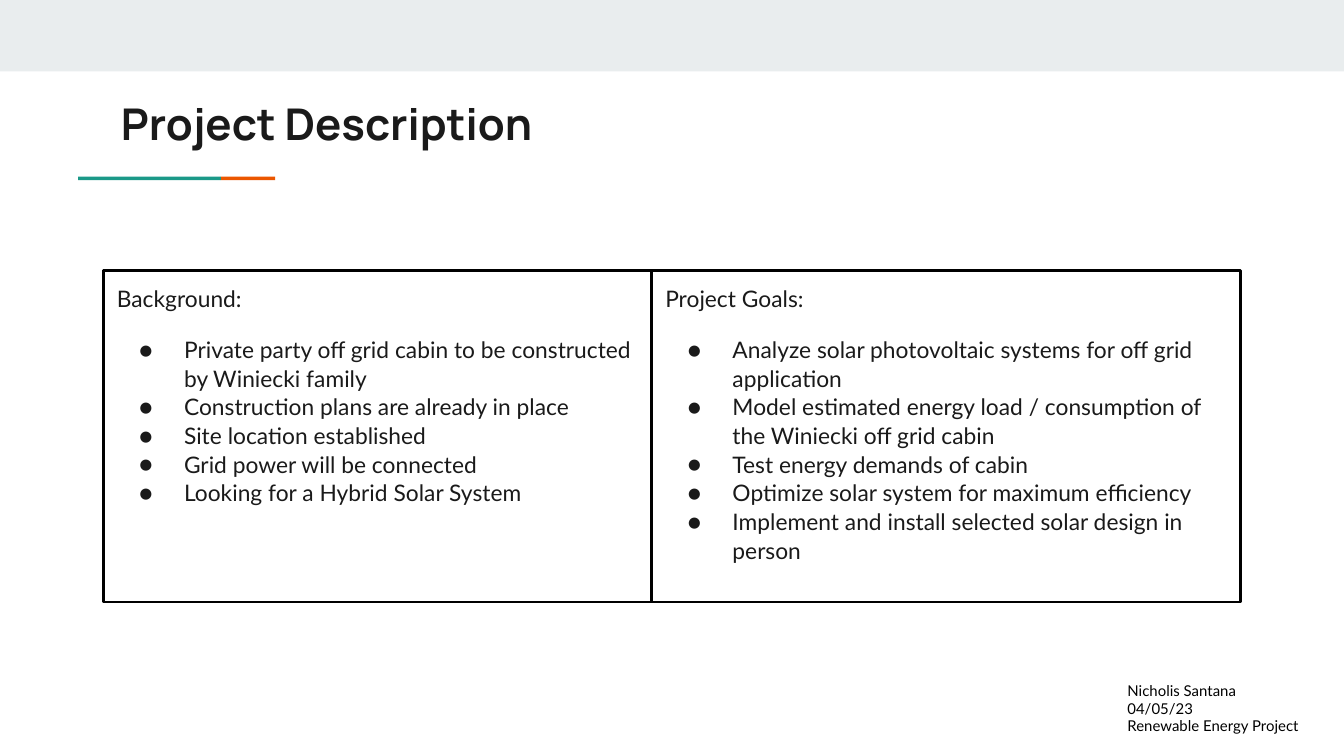
from lxml.etree import SubElement
from pptx import Presentation
from pptx.dml.color import RGBColor
from pptx.enum.shapes import MSO_SHAPE
from pptx.enum.text import MSO_ANCHOR, MSO_AUTO_SIZE, PP_ALIGN
from pptx.oxml.ns import qn
from pptx.util import Pt

THEME = {
    "ink": "1A1A1A", "black": "000000", "band": "E9EDEE",
    "teal": "1A9988", "orange": "EB5600",
    "title_font": "Manrope", "text_font": "Lato",
    "title_size": 23.4, "body_size": 12.2, "credit_size": 8,
}


def place_text(box, bounds, lines, font, paragraph):
    for name, value in zip(("left", "top", "width", "height"), bounds):
        setattr(box, name, Pt(value))
    frame = box.text_frame
    frame.text = "\n".join(lines)
    frame_format = {"word_wrap": True, "auto_size": MSO_AUTO_SIZE.NONE,
                    "vertical_anchor": MSO_ANCHOR.TOP}
    for side in ("left", "top", "right", "bottom"):
        frame_format[f"margin_{side}"] = Pt(7.2)
    for name, value in frame_format.items():
        setattr(frame, name, value)
    family, size, color, bold = font
    for para in frame.paragraphs:
        for name, value in paragraph.items():
            setattr(para, name, value)
        for span in para.runs:
            for name, value in {"name": family, "size": Pt(size), "bold": bold}.items():
                setattr(span.font, name, value)
            span.font.color.rgb = RGBColor.from_string(color)
    return frame.paragraphs


def set_bullet(para, character):
    properties = para._p.get_or_add_pPr()
    properties.set("marL", str(Pt(36) if character else 0))
    properties.set("indent", str(Pt(-24) if character else 0))
    if not character:
        SubElement(properties, qn("a:buNone"))
        return
    color = SubElement(properties, qn("a:buClr"))
    SubElement(color, qn("a:srgbClr"), val=THEME["ink"])
    SubElement(properties, qn("a:buFont"), typeface=THEME["text_font"])
    SubElement(properties, qn("a:buChar"), char=character)


deck = Presentation()
deck.slide_width, deck.slide_height = Pt(720), Pt(405)
page = deck.slides.add_slide(deck.slide_layouts[3])

bars = [
    (0, 0, 720, 38.3, "band"),
    (118.3, 94.7, 29.2, 1.8, "orange"),
    (41.8, 94.7, 76.5, 1.8, "teal"),
]
for left, top, width, height, color in bars:
    bar = page.shapes.add_shape(MSO_SHAPE.RECTANGLE, Pt(left), Pt(top), Pt(width), Pt(height))
    bar.shadow.inherit = False
    bar.fill.solid()
    bar.fill.fore_color.rgb = RGBColor.from_string(THEME[color])
    bar.line.fill.background()

plain = {"alignment": PP_ALIGN.LEFT, "space_before": Pt(0), "space_after": Pt(0)}
title_font = (THEME["title_font"], THEME["title_size"], THEME["ink"], True)
place_text(page.shapes.title, (57.6, 44.6, 605.5, 42.5), ["Project Description"], title_font, plain)

columns = [
    (55.4, 293.8, [
        "Background:",
        "Private party off grid cabin to be constructed by Winiecki family",
        "Construction plans are already in place",
        "Site location established",
        "Grid power will be connected",
        "Looking for a Hybrid Solar System",
    ]),
    (349.2, 315.4, [
        "Project Goals:",
        "Analyze solar photovoltaic systems for off grid application",
        "Model estimated energy load / consumption of the Winiecki off grid cabin",
        "Test energy demands of cabin",
        "Optimize solar system for maximum efficiency",
        "Implement and install selected solar design in person",
    ]),
]
body_font = (THEME["text_font"], THEME["body_size"], THEME["ink"], False)
for number, (left, width, lines) in enumerate(columns, start=1):
    box = page.placeholders[number]
    paragraphs = place_text(box, (left, 144.7, width, 177.8), lines, body_font,
                            {**plain, "line_spacing": 1.05})
    box.line.color.rgb = RGBColor.from_string(THEME["black"])
    box.line.width = Pt(1.5)
    paragraphs[1].space_before = Pt(12)
    for position, para in enumerate(paragraphs):
        set_bullet(para, "●" if position else None)

credit = page.shapes.add_textbox(0, 0, 0, 0)
credit_font = (THEME["text_font"], THEME["credit_size"], THEME["black"], False)
place_text(credit, (596.9, 357.8, 120.2, 43.9),
           ["Nicholis Santana", "04/05/23", "Renewable Energy Project"], credit_font, plain)

deck.save("out.pptx")
